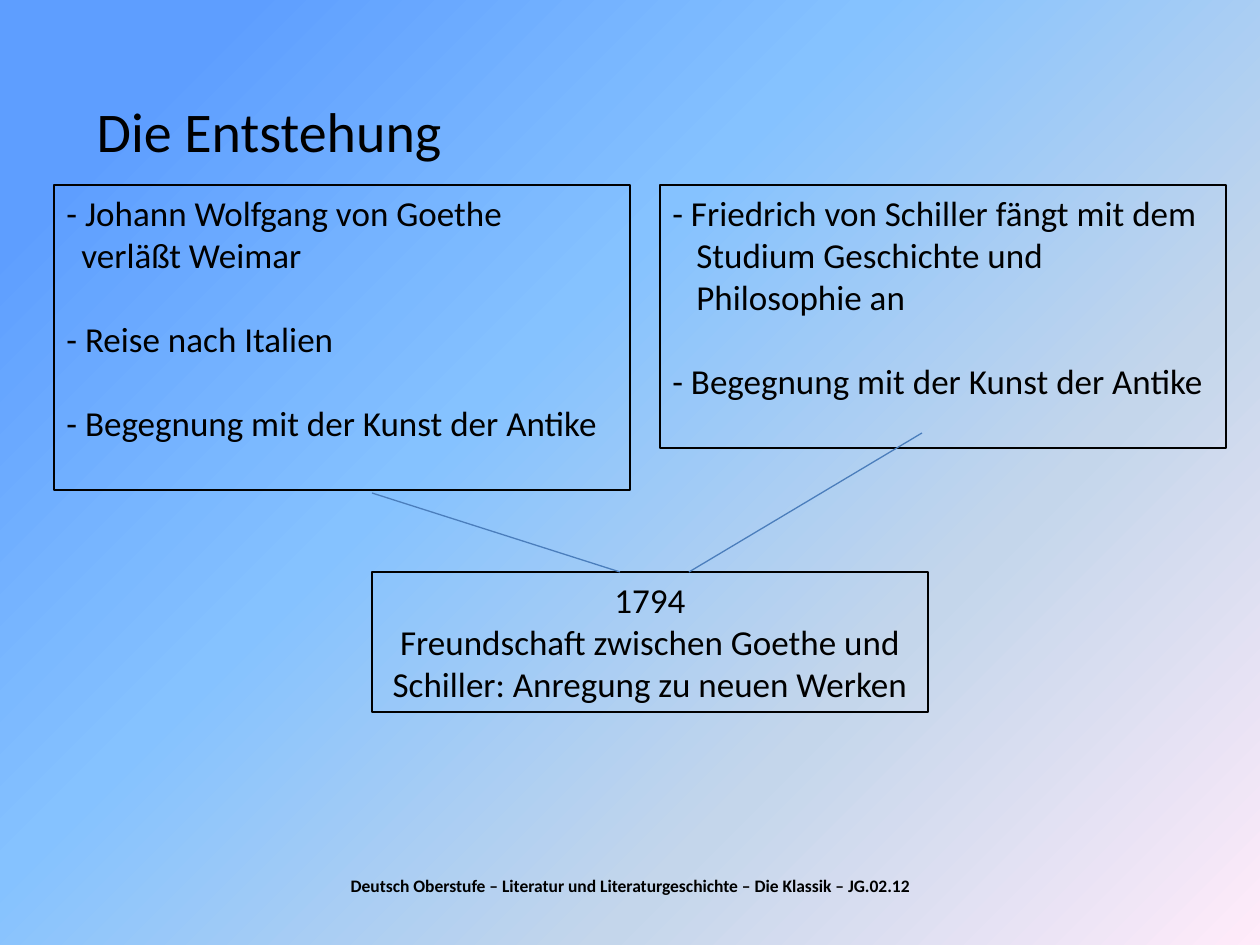
from lxml.etree import SubElement
from pptx import Presentation
from pptx.dml.color import RGBColor
from pptx.enum.shapes import MSO_CONNECTOR as Connector, MSO_SHAPE as Shape
from pptx.enum.text import MSO_ANCHOR as Anchor, MSO_AUTO_SIZE as AutoSize, PP_ALIGN as Align
from pptx.oxml.ns import qn
from pptx.util import Pt

EMU_PER_PX = 914400 / 126
FONT = "Calibri"
BLACK = "000000"
LINE_BLUE = "4B7EBC"
GRADIENT = [(0, "5E9EFF"), (11, "5E9EFF"), (40, "85C2FF"), (70, "C4D6EB"), (100, "FFEBFA")]


def px(value):
    return round(value * EMU_PER_PX)


def color(hex_value):
    return RGBColor.from_string(hex_value)


def paint_background(slide):
    fill = slide.background.fill
    fill.gradient()
    fill.gradient_angle = 315
    stops = slide.element.find(".//" + qn("a:gsLst"))
    for stop in list(stops):
        stops.remove(stop)
    for position, hex_value in GRADIENT:
        stop = SubElement(stops, qn("a:gs"), pos=str(position * 1000))
        SubElement(stop, qn("a:srgbClr"), val=hex_value)


def write(paragraph, lines, size, align=Align.LEFT, bold=False):
    paragraph.alignment = align
    for index, line in enumerate(lines):
        if index:
            paragraph.add_line_break()
        run = paragraph.add_run()
        run.text = line
        font = run.font
        font.name, font.size, font.bold = FONT, Pt(size), bold
        font.color.rgb = color(BLACK)


def add_title(slide, text, left, top, width, height):
    title = slide.shapes.title
    title.left, title.top, title.width, title.height = map(px, (left, top, width, height))
    frame = title.text_frame
    frame.auto_size = AutoSize.NONE
    frame.vertical_anchor = Anchor.MIDDLE
    write(frame.paragraphs[0], [text], 32)


def add_footer(slide, text, left, top, width, height):
    footer = slide.shapes.add_textbox(*map(px, (left, top, width, height)))
    footer.text_frame.word_wrap = True
    write(footer.text_frame.paragraphs[0], [text], 10, Align.CENTER, bold=True)


def add_box(slide, items, left, top, width, height, align=Align.LEFT, hanging=0, gap=0):
    """Outlined box; each item is a list of lines in one paragraph."""
    box = slide.shapes.add_shape(Shape.RECTANGLE, *map(px, (left, top, width, height)))
    box.shadow.inherit = False
    box.fill.background()
    box.line.color.rgb = color(BLACK)
    box.line.width = Pt(0.75)
    frame = box.text_frame
    frame.word_wrap = True
    frame.vertical_anchor = Anchor.TOP
    for index, lines in enumerate(items):
        paragraph = frame.add_paragraph() if index else frame.paragraphs[0]
        write(paragraph, lines, 20, align)
        paragraph.space_after = Pt(gap)
        if hanging:
            properties = paragraph._p.get_or_add_pPr()
            properties.set("marL", str(px(hanging)))
            properties.set("indent", str(-px(hanging)))


def add_line(slide, start, end):
    line = slide.shapes.add_connector(Connector.STRAIGHT, *map(px, start + end))
    line.line.color.rgb = color(LINE_BLUE)
    line.line.width = Pt(0.75)
    SubElement(line._element.spPr, qn("a:effectLst"))


def main():
    presentation = Presentation()
    presentation.slide_width, presentation.slide_height = px(1260), px(945)
    slide = presentation.slides.add_slide(presentation.slide_layouts[5])
    paint_background(slide)

    # Title and footer
    add_title(slide, "Die Entstehung", 84, 66, 556, 128)
    add_footer(slide, "Deutsch Oberstufe – Literatur und Literaturgeschichte – Die Klassik – JG.02.12",
               134, 869, 992, 37)

    # The two poets
    shared = "- Begegnung mit der Kunst der Antike"
    goethe = [["- Johann Wolfgang von Goethe", "verläßt Weimar"], ["- Reise nach Italien"], [shared]]
    schiller = [["- Friedrich von Schiller fängt mit dem", "Studium Geschichte und", "Philosophie an"],
                [shared]]
    add_box(slide, goethe, 54, 185, 576, 305, hanging=15, gap=24)
    add_box(slide, schiller, 660, 185, 566, 263, hanging=24, gap=24)

    # Their friendship
    friendship = [["1794"], ["Freundschaft zwischen Goethe und Schiller: Anregung zu neuen Werken"]]
    add_box(slide, friendship, 372, 572, 556, 140, align=Align.CENTER)
    add_line(slide, (372, 493), (620, 572))
    add_line(slide, (922, 433), (689, 572))

    presentation.save("out.pptx")


if __name__ == "__main__":
    main()
